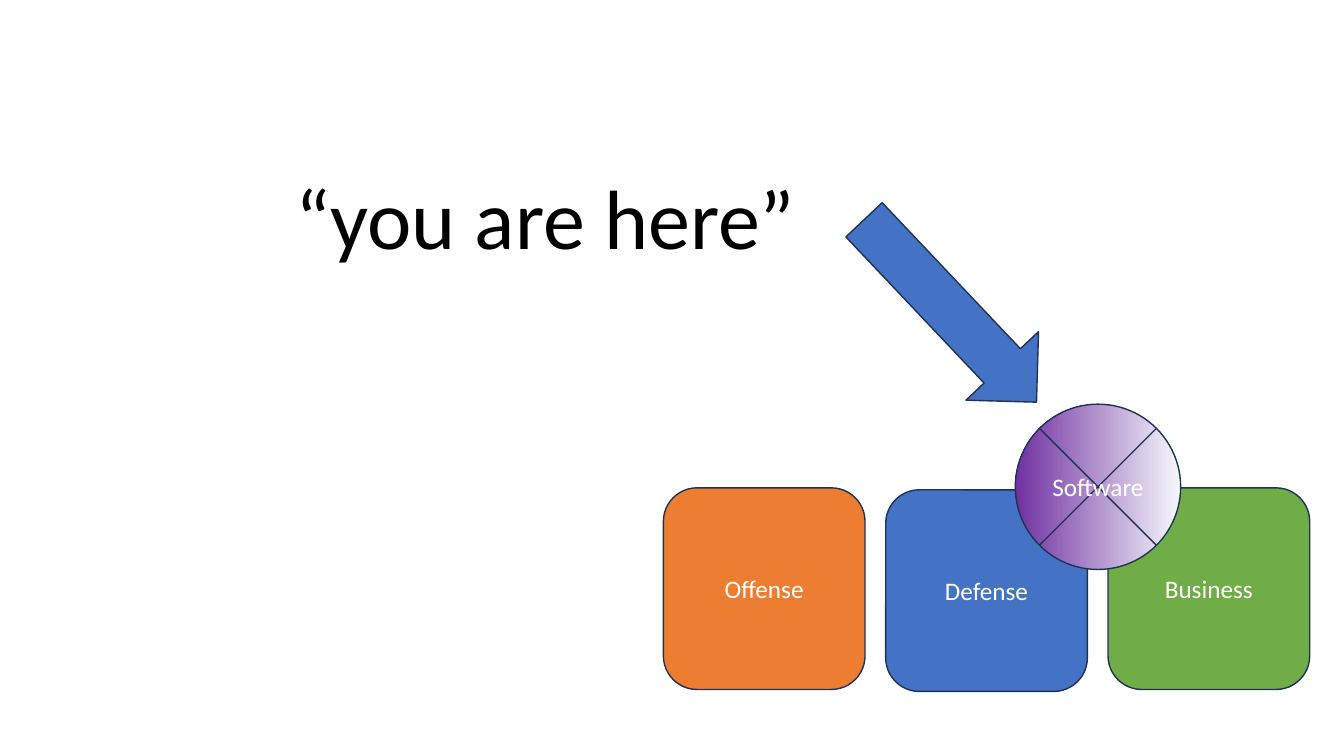
from pptx import Presentation
from pptx.dml.color import RGBColor
from pptx.enum.shapes import MSO_SHAPE
from pptx.enum.text import MSO_ANCHOR, MSO_AUTO_SIZE, PP_ALIGN
from pptx.util import Inches, Pt

COLORS = {
    "text": "000000", "label": "FFFFFF", "outline": "1E3256",
    "orange": "ED7D31", "blue": "4472C4", "green": "70AD47",
    "purple": "7030A0", "pale": "F6F8FC",
}


def write_text(shape, text, size=18, color="label", align=PP_ALIGN.CENTER,
               anchor=MSO_ANCHOR.MIDDLE, spacing=1.0):
    frame = shape.text_frame
    frame.word_wrap = True
    frame.auto_size = MSO_AUTO_SIZE.NONE
    frame.vertical_anchor = anchor
    paragraph = frame.paragraphs[0]
    paragraph.alignment = align
    paragraph.line_spacing = spacing
    run = paragraph.add_run()
    run.text = text
    run.font.name = "Calibri"
    run.font.size = Pt(size)
    run.font.color.rgb = RGBColor.from_string(COLORS[color])


def add_outlined(slide, kind, left, top, width, height, fill="blue"):
    shape = slide.shapes.add_shape(
        kind, Inches(left), Inches(top), Inches(width), Inches(height))
    shape.shadow.inherit = False
    shape.fill.solid()
    shape.fill.fore_color.rgb = RGBColor.from_string(COLORS[fill])
    shape.line.color.rgb = RGBColor.from_string(COLORS["outline"])
    shape.line.width = Pt(1)
    return shape


presentation = Presentation()
presentation.slide_width = Inches(13.33)
presentation.slide_height = Inches(7.5)
slide = presentation.slides.add_slide(presentation.slide_layouts[5])

# Title
title = slide.shapes.title
title.left, title.top = Inches(2.83), Inches(-0.41)
title.width, title.height = Inches(11.5), Inches(3.12)
write_text(title, "“you are here”", size=60, color="text",
           align=PP_ALIGN.LEFT, anchor=MSO_ANCHOR.BOTTOM, spacing=0.9)

# Row of three areas
AREA_LEFT, AREA_SIZE, AREA_PITCH = 6.58, 2, 2.205
areas = [("Offense", "orange", 4.84), ("Defense", "blue", 4.86),
         ("Business", "green", 4.84)]
for column, (name, fill, top) in enumerate(areas):
    area = add_outlined(slide, MSO_SHAPE.ROUNDED_RECTANGLE,
                        AREA_LEFT + column * AREA_PITCH, top,
                        AREA_SIZE, AREA_SIZE, fill)
    write_text(area, name)

# Software circle where two areas meet
software = add_outlined(slide, MSO_SHAPE.FLOWCHART_SUMMING_JUNCTION,
                        10.07, 4.01, 1.64, 1.64)
software.fill.gradient()
software.fill.gradient_angle = 180
for stop, color in zip(software.fill.gradient_stops, ("pale", "purple")):
    stop.color.rgb = RGBColor.from_string(COLORS[color])
write_text(software, "Software")

# Arrow from the title to the circle
arrow = add_outlined(slide, MSO_SHAPE.DOWN_ARROW, 8.93, 1.84, 0.99, 2.49)
arrow.rotation = 316.6

presentation.save("out.pptx")
